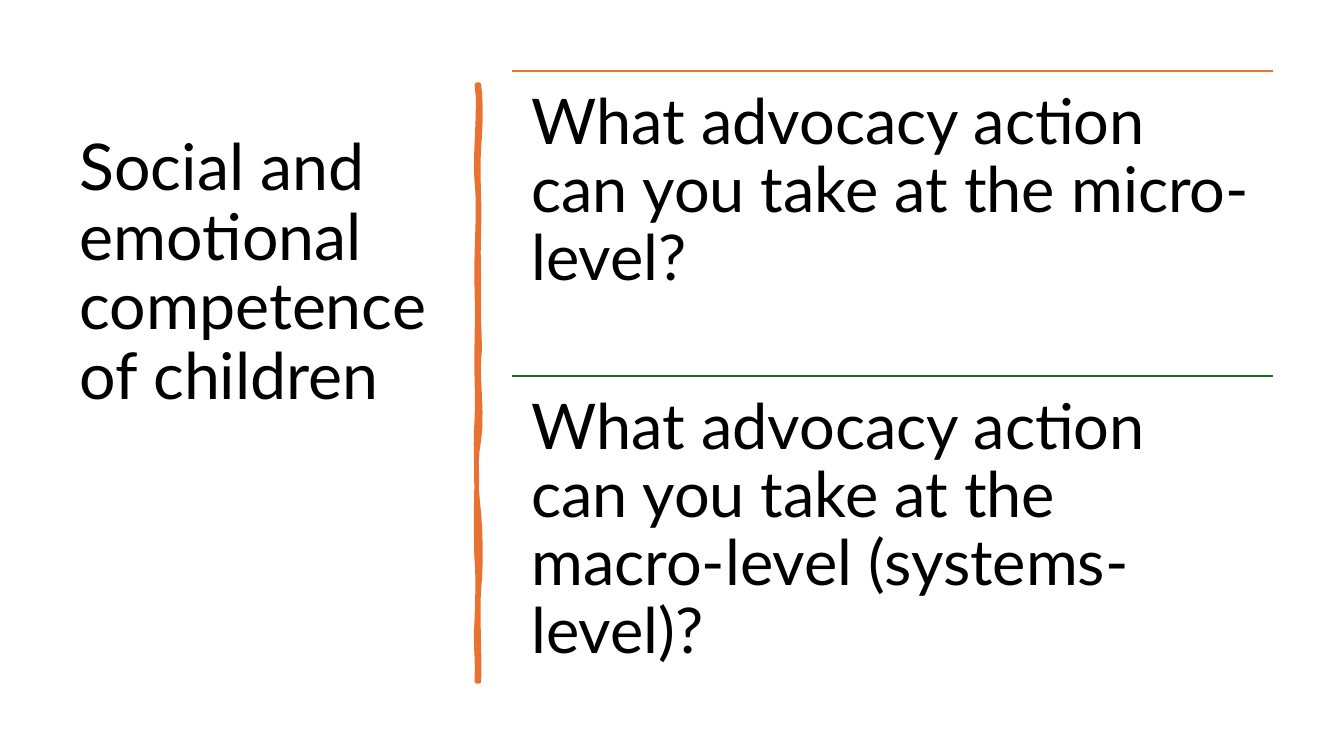
from lxml import etree
from pptx import Presentation
from pptx.dml.color import RGBColor
from pptx.enum.shapes import MSO_CONNECTOR
from pptx.enum.text import MSO_ANCHOR, MSO_AUTO_SIZE, PP_ALIGN
from pptx.oxml.ns import qn
from pptx.util import Inches, Pt

BLACK = RGBColor(0x00, 0x00, 0x00)
WHITE = RGBColor(0xFF, 0xFF, 0xFF)
ORANGE = RGBColor(0xE9, 0x71, 0x32)
GREEN = RGBColor(0x19, 0x6B, 0x24)


def write_text(tf, text, size):
    tf.word_wrap = True
    tf.auto_size = MSO_AUTO_SIZE.NONE
    p = tf.paragraphs[0]
    p.text = text
    p.alignment = PP_ALIGN.LEFT
    p.line_spacing = 0.9
    p.font.name = "Lato"
    p.font.size = Pt(size)
    p.font.color.rgb = BLACK


def bezier(points, t):
    weights = ((1 - t) ** 3, 3 * t * (1 - t) ** 2, 3 * t ** 2 * (1 - t), t ** 3)
    return tuple(Inches(sum(w * pt[i] for w, pt in zip(weights, points))) for i in (0, 1))


prs = Presentation()
prs.slide_width = Inches(13.33)
prs.slide_height = Inches(7.5)
s = prs.slides.add_slide(prs.slide_layouts[5])
s.background.fill.solid()
s.background.fill.fore_color.rgb = WHITE

# Title, raised above the middle by its bottom inset
title = s.shapes.title
title.left, title.top, title.width, title.height = [Inches(v) for v in (0.69, 0.7, 3.74, 6.11)]
tf = title.text_frame
tf.vertical_anchor = MSO_ANCHOR.MIDDLE
tf.margin_left = tf.margin_right = Inches(0.1)
tf.margin_top = Inches(0.05)
tf.margin_bottom = Inches(2.12)
write_text(tf, "Social and emotional competence of children", 46)

# Hand-drawn divider: each curve is two control points and an end point
start = (4.75, 0.84)
curves = [
    ((4.77, 1.02), (4.77, 1.19), (4.75, 1.46)),
    ((4.73, 1.73), (4.76, 1.95), (4.75, 2.26)),
    ((4.74, 2.57), (4.75, 2.62), (4.75, 2.94)),
    ((4.74, 3.25), (4.77, 3.42), (4.75, 3.56)),
    ((4.73, 3.7), (4.79, 4.14), (4.75, 4.36)),
    ((4.71, 4.57), (4.72, 4.84), (4.75, 5.1)),
    ((4.77, 5.36), (4.77, 5.64), (4.75, 5.84)),
    ((4.73, 6.03), (4.76, 6.5), (4.75, 6.76)),
    ((4.74, 6.76), (4.73, 6.76), (4.73, 6.76)),
    ((4.74, 6.46), (4.71, 6.44), (4.73, 6.13)),
    ((4.74, 5.83), (4.74, 5.7), (4.73, 5.57)),
    ((4.72, 5.44), (4.72, 4.95), (4.73, 4.77)),
    ((4.73, 4.59), (4.71, 4.45), (4.73, 4.15)),
    ((4.74, 3.86), (4.72, 3.73), (4.73, 3.35)),
    ((4.74, 2.98), (4.72, 2.81), (4.73, 2.5)),
    ((4.74, 2.18), (4.75, 2), (4.73, 1.81)),
    ((4.7, 1.63), (4.77, 1.04), (4.73, 0.84)),
]
outline = []
pen = start
for curve in curves:
    outline += [bezier((pen, *curve), step / 6) for step in range(1, 7)]
    pen = curve[-1]
builder = s.shapes.build_freeform(Inches(start[0]), Inches(start[1]))
builder.add_line_segments(outline, close=True)
divider = builder.convert_to_shape()
divider.shadow.inherit = False
divider.fill.solid()
divider.fill.fore_color.rgb = ORANGE
divider.line.color.rgb = ORANGE
divider.line.width = Pt(3.25)
etree.SubElement(divider.line._get_or_add_ln(), qn("a:round"))

# Questions, each under its own rule
left, top, width, height = 5.08, 0.7, 7.55, 3.03
questions = [
    ("What advocacy action can you take at the micro-level?", ORANGE),
    ("What advocacy action can you take at the macro-level (systems-level)?", GREEN),
]
for i, (question, color) in enumerate(questions):
    y = Inches(top + i * height)
    rule = s.shapes.add_connector(MSO_CONNECTOR.STRAIGHT, Inches(left), y, Inches(left + width), y)
    rule.line.color.rgb = color
    rule.line.width = Pt(1.5)
    etree.SubElement(rule._element.spPr, qn("a:effectLst"))

    box = s.shapes.add_textbox(Inches(left), y, Inches(width), Inches(height))
    tf = box.text_frame
    tf.margin_left = tf.margin_right = tf.margin_top = tf.margin_bottom = Inches(0.19)
    write_text(tf, question, 45)

prs.save("out.pptx")
